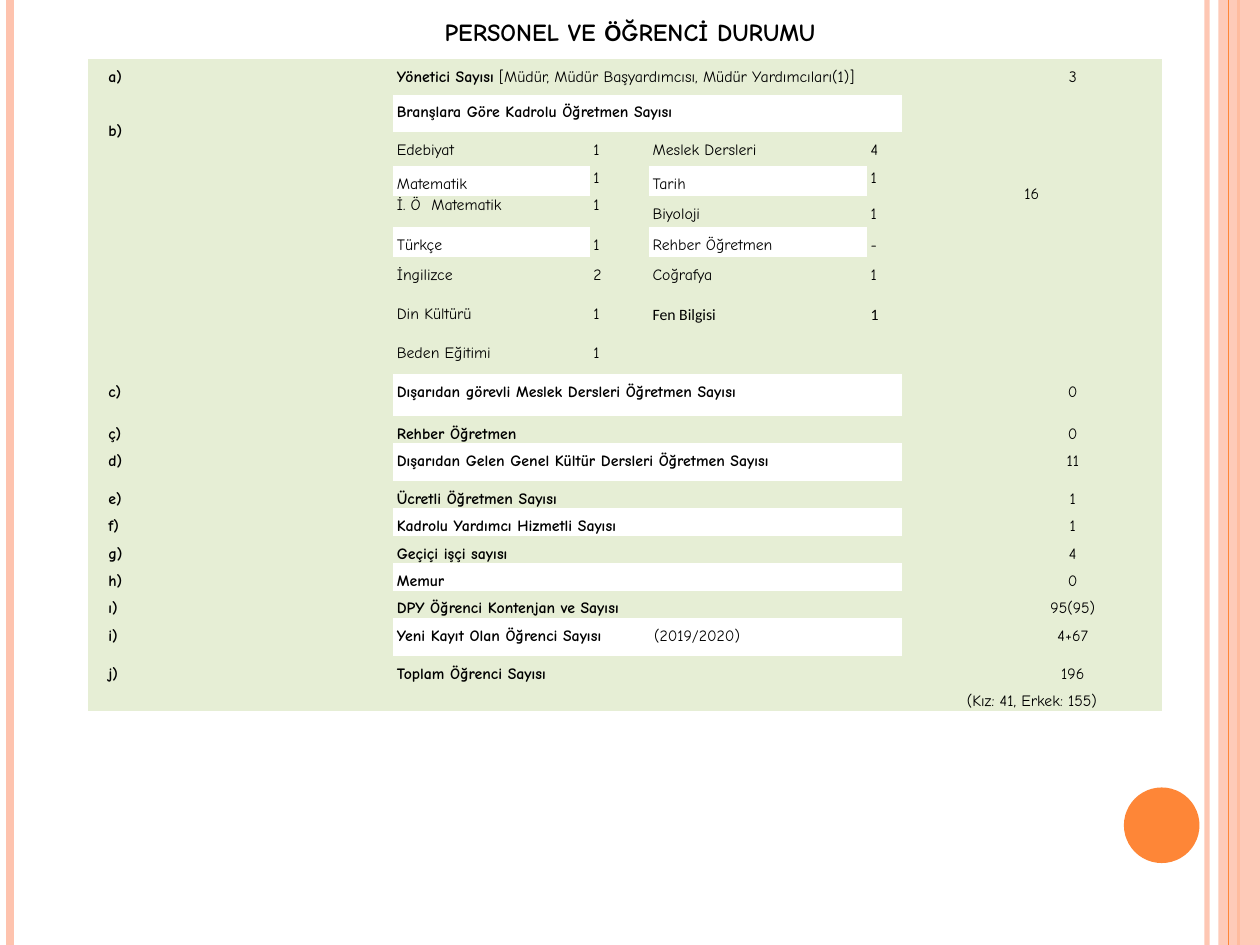
from dataclasses import dataclass

from lxml.etree import SubElement
from pptx import Presentation
from pptx.dml.color import RGBColor
from pptx.enum.shapes import MSO_CONNECTOR, MSO_SHAPE
from pptx.enum.text import MSO_ANCHOR, PP_ALIGN
from pptx.oxml.ns import qn
from pptx.util import Inches, Pt


@dataclass(frozen=True)
class Theme:
    peach: RGBColor = RGBColor(0xFE, 0xC3, 0xAE)
    orange: RGBColor = RGBColor(0xFE, 0x86, 0x37)
    green: RGBColor = RGBColor(0xE6, 0xEE, 0xD5)
    text: RGBColor = RGBColor(0, 0, 0)
    font: str = "Comic Neue"
    second_font: str = "Calibri"
    title_size: Pt = Pt(14)
    body_size: Pt = Pt(9)


theme = Theme()
NO_GRID_STYLE = "{2D5ABB26-0587-4C30-8999-92F81FD0307C}"


def set_opacity(fill, percent):
    color = fill._xPr.find(qn("a:solidFill"))[0]
    SubElement(color, qn("a:alpha"), val=str(percent * 1000))


def write(para, text, bold=False, font=theme.font, size=theme.body_size,
          spacing=1.5, indent=0, align=PP_ALIGN.LEFT):
    """Append one run to a paragraph and set the paragraph's layout."""
    para.alignment = align
    para.line_spacing = spacing
    para._p.get_or_add_pPr().set("marL", str(Inches(indent)))
    span = para.add_run()
    span.text = text
    span.font.name = font
    span.font.size = size
    span.font.bold = bold
    span.font.color.rgb = theme.text


deck = Presentation()
deck.slide_width = Inches(10)
deck.slide_height = Inches(7.5)
page = deck.slides.add_slide(deck.slide_layouts[6])

# Side rails: x, colour, width in points, opacity
band = page.shapes.add_shape(
    MSO_SHAPE.RECTANGLE, Inches(9.67), 0, Inches(0.33), Inches(7.5))
disc = page.shapes.add_shape(
    MSO_SHAPE.OVAL, Inches(8.92), Inches(6.25), Inches(0.6), Inches(0.6))
for shape, color in ((band, theme.peach), (disc, theme.orange)):
    shape.shadow.inherit = False
    shape.fill.solid()
    shape.fill.fore_color.rgb = color
    shape.line.fill.background()
set_opacity(band.fill, 87)

rails = [
    (9.58, theme.peach, 3, 93),
    (0.08, theme.peach, 4.5, 100),
    (9.83, theme.orange, 1.5, 100),
    (9.75, theme.orange, 0.75, 100),
]
for x, color, width, opacity in rails:
    rail = page.shapes.add_connector(
        MSO_CONNECTOR.STRAIGHT, Inches(x), 0, Inches(x), Inches(7.5))
    rail.line.color.rgb = color
    rail.line.width = Pt(width)
    if opacity < 100:
        set_opacity(rail.line.fill, opacity)
    SubElement(rail._element.spPr, qn("a:effectLst"))
    if x == 9.83:  # this rail lies under the translucent band
        band._element.addprevious(rail._element)

# Staff and student table
column_widths = [2.42, 1.56, 0.47, 1.73, 0.28, 2.06]
row_heights = [0.28, 0.3, 0.27, *[0.24] * 3, *[0.31] * 3, 0.33, 0.19, 0.3,
               *[0.19] * 5, 0.3, 0.41]
frame = page.shapes.add_table(
    len(row_heights), len(column_widths), Inches(0.7), Inches(0.47),
    Inches(sum(column_widths)), Inches(sum(row_heights)))
table = frame.table
table.first_row = False
table.horz_banding = False
table._tbl.tblPr.find(qn("a:tableStyleId")).text = NO_GRID_STYLE
for column, width in zip(table.columns, column_widths):
    column.width = Inches(width)
for row, height in zip(table.rows, row_heights):
    row.height = Inches(height)

for row in range(len(row_heights)):
    for column in range(len(column_widths)):
        cell = table.cell(row, column)
        cell.margin_left = cell.margin_right = Inches(0.03)
        cell.margin_top = cell.margin_bottom = 0
        if row % 2 and row != 7 and column in (1, 3):
            cell.fill.background()
        else:
            cell.fill.solid()
            cell.fill.fore_color.rgb = theme.green

# Lettered entries: row, letter, bold label, plain label, count
entries = [
    (0, "a)", "Yönetici Sayısı",
     " [Müdür, Müdür Başyardımcısı, Müdür Yardımcıları(1)]", "3"),
    (1, "b)", "Branşlara Göre Kadrolu Öğretmen Sayısı", "", "16"),
    (9, "c)", "Dışarıdan görevli Meslek Dersleri Öğretmen Sayısı", "", "0"),
    (10, "ç)", "Rehber Öğretmen", "", "0"),
    (11, "d)", "Dışarıdan Gelen Genel Kültür Dersleri Öğretmen Sayısı", "", "11"),
    (12, "e)", "Ücretli Öğretmen Sayısı", "", "1"),
    (13, "f)", "Kadrolu Yardımcı Hizmetli Sayısı", "", "1"),
    (14, "g)", "Geçiçi işçi sayısı", "", "4"),
    (15, "h)", "Memur", "", "0"),
    (16, "ı)", "DPY Öğrenci Kontenjan ve Sayısı", "", "95(95)"),
    (17, "i)", "Yeni Kayıt Olan Öğrenci Sayısı\t", " (2019/2020)", "4+67"),
    (18, "j)", "Toplam Öğrenci Sayısı", "", "196"),
]
for row, letter, label, detail, count in entries:
    letter_cell, label_cell, count_cell = (table.cell(row, c) for c in (0, 1, 5))
    label_cell.merge(table.cell(row, 4))
    write(letter_cell.text_frame.paragraphs[0], letter, bold=True, indent=0.13)
    label_para = label_cell.text_frame.paragraphs[0]
    write(label_para, label, bold=True)
    if detail:
        write(label_para, detail)
    write(count_cell.text_frame.paragraphs[0], count,
          indent=0 if row == 1 else 0.65, align=PP_ALIGN.CENTER)
write(table.cell(18, 5).text_frame.add_paragraph(), "(Kız: 41, Erkek: 155)",
      align=PP_ALIGN.CENTER)

# The branch entry spans its subject rows
for column, top in ((0, 0.15), (5, 0.65)):
    cell = table.cell(1, column)
    cell.merge(table.cell(6, column))
    cell.margin_top = Inches(top)

# Subjects with teacher counts, two pairs a row
subjects = [
    ("Edebiyat", "1", "Meslek Dersleri", "4"),
    ("Matematik", "1", "Tarih", "1"),
    ("İ. Ö  Matematik", "1", "Biyoloji", "1"),
    ("Türkçe", "1", "Rehber Öğretmen", "-"),
    ("İngilizce", "2", "Coğrafya", "1"),
    ("Din Kültürü", "1", "Fen Bilgisi", "1"),
    ("Beden Eğitimi", "1"),
]
tight_spacing = {(3, 2): 1.15, (3, 4): 1.15, (4, 1): 1.0, (4, 2): 1.0}
for row, texts in enumerate(subjects, start=2):
    for column, text in enumerate(texts, start=1):
        science = row == 7 and column >= 3
        write(table.cell(row, column).text_frame.paragraphs[0], text,
              font=theme.second_font if science else theme.font,
              spacing=tight_spacing.get((row, column), 1.5))

# Title
title = page.shapes.add_textbox(0, 0, Inches(10), Inches(0.5))
title.text_frame.word_wrap = False
title.text_frame.vertical_anchor = MSO_ANCHOR.MIDDLE
title_para = title.text_frame.paragraphs[0]
for text, font in (("PERSONEL VE ", theme.font), ("Ö", theme.second_font),
                   ("ĞRENCİ DURUMU", theme.font)):
    write(title_para, text, bold=True, font=font, size=theme.title_size,
          spacing=1.0, align=PP_ALIGN.CENTER)

deck.save("out.pptx")
